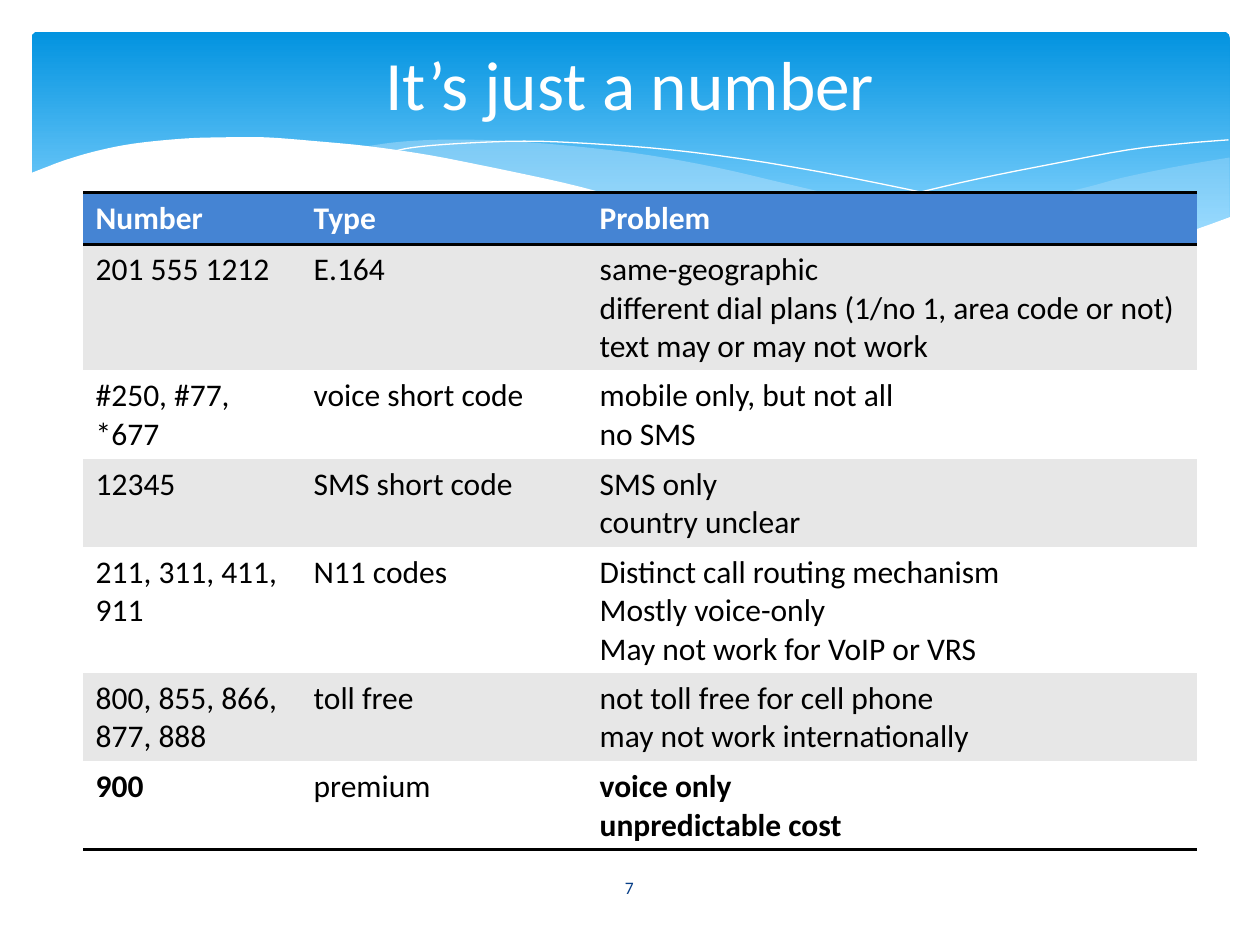
from dataclasses import dataclass

from lxml import etree
from pptx import Presentation
from pptx.dml.color import RGBColor
from pptx.enum.shapes import MSO_SHAPE
from pptx.enum.text import MSO_ANCHOR, MSO_AUTO_SIZE, PP_ALIGN
from pptx.oxml.ns import qn
from pptx.util import Inches, Pt

CENTER, LEFT = PP_ALIGN.CENTER, PP_ALIGN.LEFT
MIDDLE = MSO_ANCHOR.MIDDLE
ROUNDED = MSO_SHAPE.ROUNDED_RECTANGLE
FONT = "Calibri"
WHITE, BLACK, NAVY = "FFFFFF", "000000", "073E87"
HEADER_BLUE, BAND_GRAY, MIST = "4584D3", "E7E7E7", "C6E7FC"
NO_GRID_STYLE = "{2D5ABB26-0587-4C30-8999-92F81FD0307C}"

Point = tuple[float, float]


@dataclass
class Wave:
    """Smooth edges joined at sharp corners; filled if fill is given."""
    edges: list[list[Point]]
    fill: str | None = None
    opacity: int = 100


@dataclass
class NumberKind:
    number: str
    kind: str
    problems: list[str]
    bold: bool = False


WAVES = [
    Wave([[(9.76, 1.25), (9.35, 1.32), (8.91, 1.41), (8.61, 1.49), (8.05, 1.62),
           (7.53, 1.74), (7.06, 1.83), (6.61, 1.91)],
          [(6.61, 1.91), (7.05, 1.96), (7.45, 2), (7.81, 2.03), (8.24, 2.03),
           (8.63, 2.01), (8.97, 1.96), (9.35, 1.87), (9.76, 1.72)]], MIST, 29),
    Wave([[(8.93, 1.98), (8.37, 1.9), (7.75, 1.8), (7.06, 1.65), (6.29, 1.47),
           (5.69, 1.33), (5.14, 1.23), (4.65, 1.17), (4.2, 1.13), (3.8, 1.11),
           (3.44, 1.11), (3.13, 1.13), (2.86, 1.17)],
          [(2.86, 1.17), (3.42, 1.25), (4.04, 1.37), (4.49, 1.47), (5.3, 1.66),
           (6.01, 1.81), (6.65, 1.92), (7.22, 1.99), (7.73, 2.03), (8.18, 2.04),
           (8.57, 2.02), (8.93, 1.98)]], MIST, 40),
    Wave([[(3.09, 1.21), (3.28, 1.17), (3.63, 1.14), (4.16, 1.12), (4.69, 1.14),
           (5.33, 1.19), (6.08, 1.29), (6.95, 1.45), (7.95, 1.67), (9.07, 1.97)]]),
    Wave([[(6.13, 1.82), (6.53, 1.72), (7.2, 1.55), (7.76, 1.42), (8.36, 1.3),
           (8.95, 1.19), (9.38, 1.14), (9.75, 1.11)]]),
    Wave([[(9.77, 1.72), (9.4, 1.85), (8.99, 1.95), (8.5, 2.01), (8.09, 2.02),
           (7.61, 2.01), (7.08, 1.96), (6.48, 1.87), (5.79, 1.75), (5.03, 1.59),
           (4.47, 1.45), (3.91, 1.33), (3.4, 1.23), (2.92, 1.16), (2.5, 1.12),
           (2.11, 1.09), (1.77, 1.09), (1.46, 1.1), (1.06, 1.14), (0.76, 1.2),
           (0.52, 1.27), (0.36, 1.33), (0.23, 1.38)],
          [(0.23, 2.55), (9.77, 2.55)]], WHITE),
]

HEADINGS = ["Number", "Type", "Problem"]
COLUMN_WIDTHS = [1.73, 2.27, 4.84]
ROW_HEIGHT = 0.41
KINDS = [
    NumberKind("201 555 1212", "E.164",
               ["same-geographic\vdifferent dial plans (1/no 1, area code or not)",
                "text may or may not work"]),
    NumberKind("#250, #77, *677", "voice short code",
               ["mobile only, but not all", "no SMS"]),
    NumberKind("12345", "SMS short code", ["SMS only", "country unclear"]),
    NumberKind("211, 311, 411, 911", "N11 codes",
               ["Distinct call routing mechanism", "Mostly voice-only",
                "May not work for VoIP or VRS"]),
    NumberKind("800, 855, 866, 877, 888", "toll free",
               ["not toll free for cell phone", "may not work internationally"]),
    NumberKind("900", "premium", ["voice only", "unpredictable cost"], bold=True),
]


def rgb(value: str) -> RGBColor:
    return RGBColor.from_string(value)


def write(frame, lines: list[str], *, size: float = 18, color: str = BLACK,
          bold: bool = False, align=LEFT) -> None:
    for index, line in enumerate(lines):
        paragraph = frame.paragraphs[0] if index == 0 else frame.add_paragraph()
        paragraph.text = line
        paragraph.alignment = align
        for run in paragraph.runs:
            run.font.name, run.font.size = FONT, Pt(size)
            run.font.bold, run.font.color.rgb = bold, rgb(color)


def place(shape, left: float, top: float, width: float, height: float) -> None:
    shape.left, shape.top = Inches(left), Inches(top)
    shape.width, shape.height = Inches(width), Inches(height)


def smooth(knots: list[Point], steps: int = 4) -> list[Point]:
    """Pass a Catmull-Rom curve through the knots."""
    padded = [knots[0], *knots, knots[-1]]
    curve = [knots[0]]
    for a, b, c, d in zip(padded, padded[1:], padded[2:], padded[3:]):
        for step in range(1, steps + 1):
            t = step / steps
            curve.append(tuple(
                (2 * q + (r - p) * t + (2 * p - 5 * q + 4 * r - s) * t**2
                 + (3 * q - p - 3 * r + s) * t**3) / 2
                for p, q, r, s in zip(a, b, c, d)))
    return curve


def draw_wave(shapes, wave: Wave) -> None:
    points = [(Inches(x), Inches(y)) for edge in wave.edges for x, y in smooth(edge)]
    builder = shapes.build_freeform(*points[0])
    builder.add_line_segments(points[1:], close=wave.fill is not None)
    shape = builder.convert_to_shape()
    shape.shadow.inherit = False
    if wave.fill is None:
        shape.fill.background()
        shape.line.color.rgb, shape.line.width = rgb(WHITE), Pt(0)
        return
    shape.line.fill.background()
    shape.fill.solid()
    shape.fill.fore_color.rgb = rgb(wave.fill)
    if wave.opacity < 100:
        tint = next(shape.element.iter(qn("a:srgbClr")))
        etree.SubElement(tint, qn("a:alpha"), val=str(wave.opacity * 1000))


def draw_banner(shapes) -> None:
    banner = shapes.add_shape(ROUNDED, Inches(0.25), Inches(0.25), Inches(9.51), Inches(1.72))
    banner.adjustments[0] = 0.03
    banner.shadow.inherit = False
    banner.line.fill.background()
    banner.fill.gradient()
    banner.fill.gradient_angle = 270
    for stop, color, position in zip(banner.fill.gradient_stops, ("0293E0", "83D3FE"), (0, 0.9)):
        stop.color.rgb, stop.position = rgb(color), position


def fill_cell(cell, lines: list[str], fill: str, borders: tuple[str, ...] = (),
              **text_format) -> None:
    write(cell.text_frame, lines, **text_format)
    # Borders have to come before the fill in the cell properties
    properties = cell._tc.get_or_add_tcPr()
    for side in borders:
        border = etree.SubElement(properties, qn(f"a:{side}"), w=str(Pt(2)))
        solid = etree.SubElement(border, qn("a:solidFill"))
        etree.SubElement(solid, qn("a:srgbClr"), val=BLACK)
    cell.fill.solid()
    cell.fill.fore_color.rgb = rgb(fill)


def draw_table(shapes) -> None:
    frame = shapes.add_table(len(KINDS) + 1, len(HEADINGS), Inches(0.66), Inches(1.53),
                             Inches(8.84), Inches(5.21))
    table = frame.table
    next(frame.element.iter(qn("a:tableStyleId"))).text = NO_GRID_STYLE
    for column, width in zip(table.columns, COLUMN_WIDTHS):
        column.width = Inches(width)
    for row in table.rows:
        row.height = Inches(ROW_HEIGHT)  # rows grow with their text
    frame.height = Inches(5.21)

    for column, heading in enumerate(HEADINGS):
        fill_cell(table.cell(0, column), [heading], HEADER_BLUE, ("lnT", "lnB"),
                  color=WHITE, bold=True)
    for row, entry in enumerate(KINDS, start=1):
        band = BAND_GRAY if row % 2 else WHITE
        borders = ("lnB",) if row == len(KINDS) else ()
        contents = [([entry.number], entry.bold), ([entry.kind], False),
                    (entry.problems, entry.bold)]
        for column, (lines, bold) in enumerate(contents):
            fill_cell(table.cell(row, column), lines, band, borders, bold=bold)


def main() -> None:
    deck = Presentation()
    deck.slide_width, deck.slide_height = Inches(10), Inches(7.5)
    slide = deck.slides.add_slide(deck.slide_layouts[5])
    shapes = slide.shapes

    # Banner with waves
    draw_banner(shapes)
    for wave in WAVES:
        draw_wave(shapes, wave)

    # Title, brought in front of the banner
    title = shapes.title
    title.element.getparent().append(title.element)
    place(title, 0.5, 0.28, 9, 0.75)
    title.text_frame.auto_size = MSO_AUTO_SIZE.NONE
    title.text_frame.vertical_anchor = MIDDLE
    write(title.text_frame, ["It’s just a number"], size=39.6, color=WHITE, align=CENTER)

    # Page number
    page = shapes.add_textbox(Inches(4.36), Inches(6.84), Inches(1.27), Inches(0.4))
    page.text_frame.word_wrap = True
    page.text_frame.vertical_anchor = MIDDLE
    write(page.text_frame, ["7"], size=10, color=NAVY, align=CENTER)

    draw_table(shapes)
    deck.save("out.pptx")


if __name__ == "__main__":
    main()
